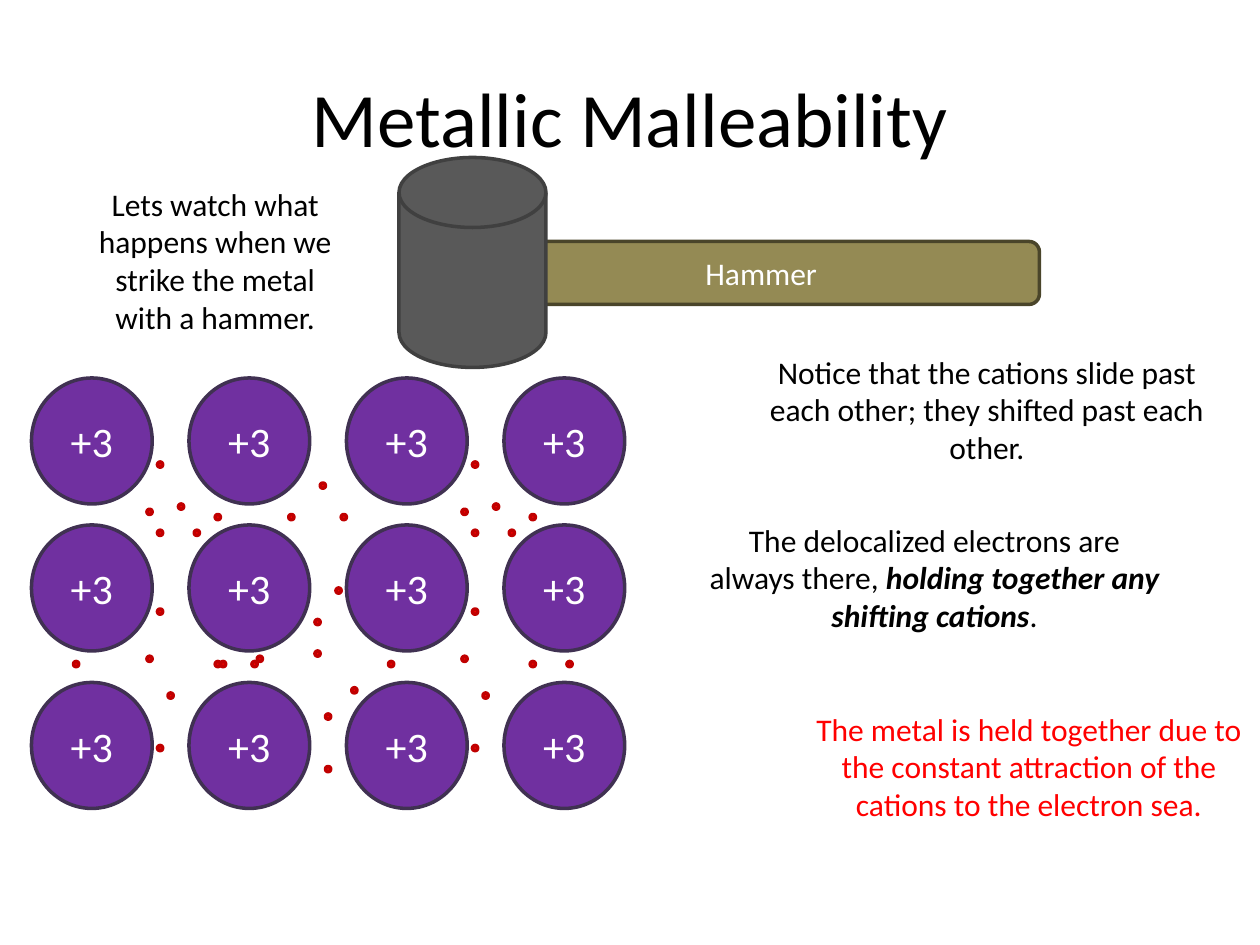
from dataclasses import dataclass
from itertools import product

from pptx import Presentation
from pptx.dml.color import RGBColor
from pptx.enum.shapes import MSO_SHAPE as Shape
from pptx.enum.text import MSO_ANCHOR as Anchor, MSO_AUTO_SIZE as AutoSize, PP_ALIGN as Align
from pptx.util import Inches, Pt


@dataclass(frozen=True)
class Theme:
    font: str = "Calibri"
    title_size: int = 44
    ion_size: int = 24
    body_size: int = 18
    line_width: int = 2
    ink: str = "000000"
    light: str = "FFFFFF"
    accent: str = "FF0000"
    cation: tuple = ("7030A0", "403152")
    electron: tuple = ("FF0000", "C00000")
    handle: tuple = ("948A54", "4A452A")
    head: tuple = ("595959", "404040")


class SlideBuilder:
    CELLS_PER_INCH = 24

    def __init__(self, prs, theme):
        self.theme = theme
        self.s = prs.slides.add_slide(prs.slide_layouts[5])

    def box(self, *cells):
        return [Inches(n / self.CELLS_PER_INCH) for n in cells]

    def set_text(self, tf, runs, size, color, anchor=Anchor.MIDDLE):
        tf.word_wrap = True
        tf.vertical_anchor = anchor
        p = tf.paragraphs[0]
        p.alignment = Align.CENTER
        p.font.name = self.theme.font
        p.font.size = Pt(size)
        p.font.color.rgb = RGBColor.from_string(color)
        for text, strong in runs:
            r = p.add_run()
            r.text = text
            if strong:
                r.font.bold = r.font.italic = True

    def title(self, text, *cells):
        sp = self.s.shapes.title
        sp.left, sp.top, sp.width, sp.height = self.box(*cells)
        self.set_text(sp.text_frame, [(text, False)], self.theme.title_size, self.theme.ink)

    def shape(self, kind, cells, colors, text=None, size=None, parent=None):
        sp = (parent or self.s).shapes.add_shape(kind, *self.box(*cells))
        fill, line = colors
        sp.shadow.inherit = False
        sp.fill.solid()
        sp.fill.fore_color.rgb = RGBColor.from_string(fill)
        sp.line.color.rgb = RGBColor.from_string(line)
        sp.line.width = Pt(self.theme.line_width)
        if text:
            self.set_text(sp.text_frame, [(text, False)], size, self.theme.light)

    def cation(self, x, y):
        self.shape(Shape.OVAL, (x, y, 23, 24), self.theme.cation, "+3", self.theme.ion_size)

    def electron(self, x, y):
        self.shape(Shape.OVAL, (x, y, 1, 1), self.theme.electron)

    def hammer(self):
        group = self.s.shapes.add_group_shape()
        self.shape(Shape.ROUNDED_RECTANGLE, (92, 46, 106, 12), self.theme.handle,
                   "Hammer", self.theme.body_size, group)
        self.shape(Shape.FLOWCHART_MAGNETIC_DISK, (76, 30, 28, 40), self.theme.head, parent=group)

    def note(self, cells, runs, color):
        tf = self.s.shapes.add_textbox(*self.box(*cells)).text_frame
        self.set_text(tf, runs, self.theme.body_size, color, Anchor.TOP)
        tf.auto_size = AutoSize.SHAPE_TO_FIT_TEXT


CATION_COLUMNS = range(6, 97, 30)
CATION_ROWS = (72, 100, 130)
CLUSTER_SHIFTS = (0, 60)
CLUSTER = [(34, 96), (30, 101), (30, 88), (28, 97), (37, 101), (41, 98), (14, 126),
           (32, 132), (30, 142), (30, 116), (28, 125), (48, 126), (41, 126)]
LOOSE_ELECTRONS = [(55, 98), (65, 98), (61, 92), (64, 112), (62, 146), (60, 118),
                   (42, 126), (62, 136), (49, 125), (67, 131), (60, 124)]


def main():
    prs = Presentation()
    prs.slide_width, prs.slide_height = Inches(10), Inches(7.5)
    theme = Theme()
    slide = SlideBuilder(prs, theme)
    slide.title("Metallic Malleability", 12, 7.2, 216, 30)

    for x, y in product(CATION_COLUMNS, CATION_ROWS):
        slide.cation(x, y)
    for shift, (x, y) in product(CLUSTER_SHIFTS, CLUSTER):
        slide.electron(x + shift, y)
    for x, y in LOOSE_ELECTRONS:
        slide.electron(x, y)
    slide.hammer()

    notes = [
        ((16, 34, 50, 31.5), theme.ink,
         [("Lets watch what happens when we strike the metal with a hammer.", False)]),
        ((142, 66, 92, 24.25), theme.ink,
         [("Notice that the cations slide past each other; they shifted past each other.", False)]),
        ((132, 98, 92, 24.25), theme.ink,
         [("The delocalized electrons are always there,", False),
          (" holding together any shifting cations", True), (".", False)]),
        ((150, 134, 92, 24.25), theme.accent,
         [("The metal is held together due to the constant attraction of the cations"
           " to the electron sea.", False)]),
    ]
    for cells, color, runs in notes:
        slide.note(cells, runs, color)

    prs.save("out.pptx")


if __name__ == "__main__":
    main()
